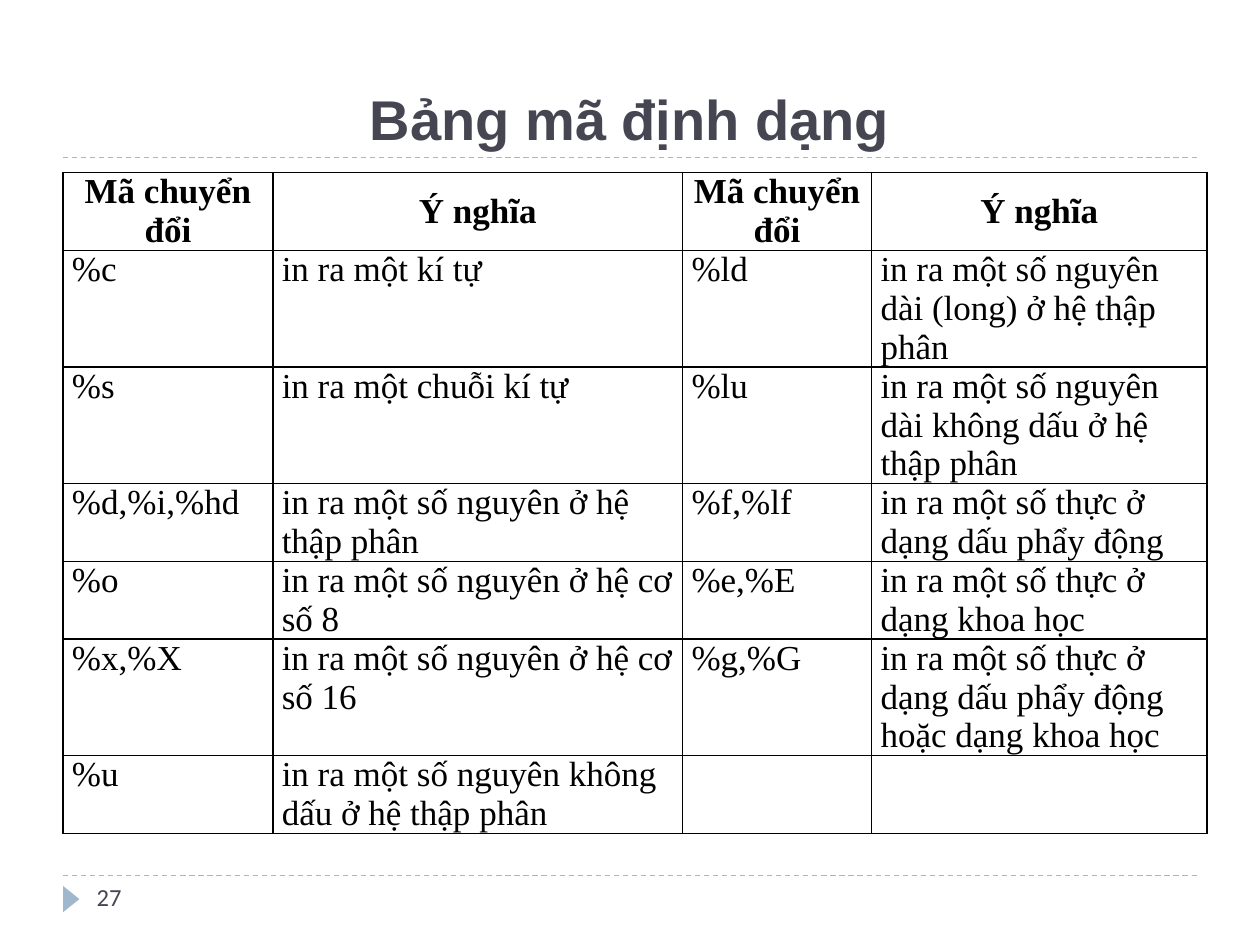
import pptx
import pptx.util
import pptx.dml.color
import pptx.enum.dml
import pptx.enum.shapes
import pptx.enum.text
import pptx.oxml
import pptx.oxml.ns
from lxml import etree

Cm, Pt = pptx.util.Cm, pptx.util.Pt
RGBColor = pptx.dml.color.RGBColor
ALIGN = pptx.enum.text.PP_ALIGN
ANCHOR = pptx.enum.text.MSO_ANCHOR
SHAPE = pptx.enum.shapes.MSO_SHAPE
qn = pptx.oxml.ns.qn

# Content
TITLE = "Bảng mã định dạng"
PAGE_NUMBER = "27"
HEADINGS = ("Mã chuyển đổi", "Ý nghĩa") * 2
CODES = [
    ("%c", "in ra một kí tự",
     "%ld", "in ra một số nguyên dài (long) ở hệ thập phân"),
    ("%s", "in ra một chuỗi kí tự",
     "%lu", "in ra một số nguyên dài không dấu ở hệ thập phân"),
    ("%d,%i,%hd", "in ra một số nguyên ở hệ thập phân",
     "%f,%lf", "in ra một số thực ở dạng dấu phẩy động"),
    ("%o", "in ra một số nguyên ở hệ cơ số 8",
     "%e,%E", "in ra một số thực ở dạng khoa học"),
    ("%x,%X", "in ra một số nguyên ở hệ cơ số 16",
     "%g,%G", "in ra một số thực ở dạng dấu phẩy động hoặc dạng khoa học"),
    ("%u", "in ra một số nguyên không dấu ở hệ thập phân", "", ""),
]

# Measures in centimetres, and colours
COLUMN_WIDTHS = (4.23, 8.26, 3.81, 6.76)
ROW_LINES = (2, 3, 3, 2, 2, 3, 2)
LINE_HEIGHT = 0.78
MARGIN = 1.27
RULE_TOPS = (3.18, 17.65)
RULE_END = 24.13
BLACK = RGBColor(0x00, 0x00, 0x00)
SLATE = RGBColor(0x46, 0x46, 0x53)
PALE_BLUE = RGBColor(0x9F, 0xB8, 0xCD)


def write(frame, text, font, size, color, bold=False, align=ALIGN.LEFT, spacing=0):
    frame.word_wrap = True
    para = frame.paragraphs[0]
    para.alignment = align
    para.space_before = para.space_after = Pt(spacing)
    span = para.add_run()
    span.text = text
    span.font.name = font
    span.font.size = Pt(size)
    span.font.bold = bold
    span.font.color.rgb = color


def add_borders(cell):
    properties = cell._tc.get_or_add_tcPr()
    for index, side in enumerate(("lnL", "lnR", "lnT", "lnB")):
        border = etree.Element(qn("a:" + side), w=str(Pt(1)))
        fill = etree.SubElement(border, qn("a:solidFill"))
        etree.SubElement(fill, qn("a:srgbClr"), val=str(BLACK))
        properties.insert(index, border)


deck = pptx.Presentation()
deck.slide_width, deck.slide_height = Cm(25.4), Cm(19.05)
page = deck.slides.add_slide(deck.slide_layouts[5])

# Dashed rules
for top in RULE_TOPS:
    rule = page.shapes.add_connector(
        pptx.enum.shapes.MSO_CONNECTOR.STRAIGHT,
        Cm(MARGIN), Cm(top), Cm(RULE_END), Cm(top))
    rule.line.color.rgb = PALE_BLUE
    rule.line.width = Pt(0.75)
    rule.line.dash_style = pptx.enum.dml.MSO_LINE.DASH
    etree.SubElement(rule._element.spPr, qn("a:effectLst"))

# Page marker
marker = page.shapes.add_shape(
    SHAPE.ISOSCELES_TRIANGLE, Cm(1.17), Cm(17.96), Cm(0.53), Cm(0.33))
marker.rotation = 90
marker.shadow.inherit = False
marker.fill.solid()
marker.fill.fore_color.rgb = PALE_BLUE
marker.line.fill.background()

# Title
title = page.shapes.title
title.left, title.top = Cm(MARGIN), Cm(0.43)
title.width, title.height = Cm(22.86), Cm(2.75)
title.text_frame.vertical_anchor = ANCHOR.BOTTOM
write(title.text_frame, TITLE, font="Arial", size=32, color=SLATE,
      bold=True, align=ALIGN.CENTER)

# Table of format codes
rows = [HEADINGS] + CODES
table = page.shapes.add_table(
    len(rows), len(HEADINGS), Cm(MARGIN), Cm(3.48),
    Cm(sum(COLUMN_WIDTHS)), Cm(sum(ROW_LINES) * LINE_HEIGHT)).table
for column, width in zip(table.columns, COLUMN_WIDTHS):
    column.width = Cm(width)
for row, lines in zip(table.rows, ROW_LINES):
    row.height = Cm(lines * LINE_HEIGHT)

for row_index, texts in enumerate(rows):
    heading = row_index == 0
    for column_index, text in enumerate(texts):
        cell = table.cell(row_index, column_index)
        cell.fill.background()
        add_borders(cell)
        cell.margin_left = cell.margin_right = Cm(0.18)
        cell.margin_top = cell.margin_bottom = 0
        centred = heading and column_index % 2 == 1
        cell.vertical_anchor = ANCHOR.MIDDLE if centred else ANCHOR.TOP
        if text:
            write(cell.text_frame, text, font="Times New Roman", size=20,
                  color=BLACK, bold=heading,
                  align=ALIGN.CENTER if heading else ALIGN.LEFT,
                  spacing=6 if heading else 3)

# Page number
number = page.shapes.add_textbox(Cm(1.7), Cm(17.65), Cm(5.51), Cm(1.02))
write(number.text_frame, PAGE_NUMBER, font="Calibri", size=14, color=SLATE)

deck.save("out.pptx")
